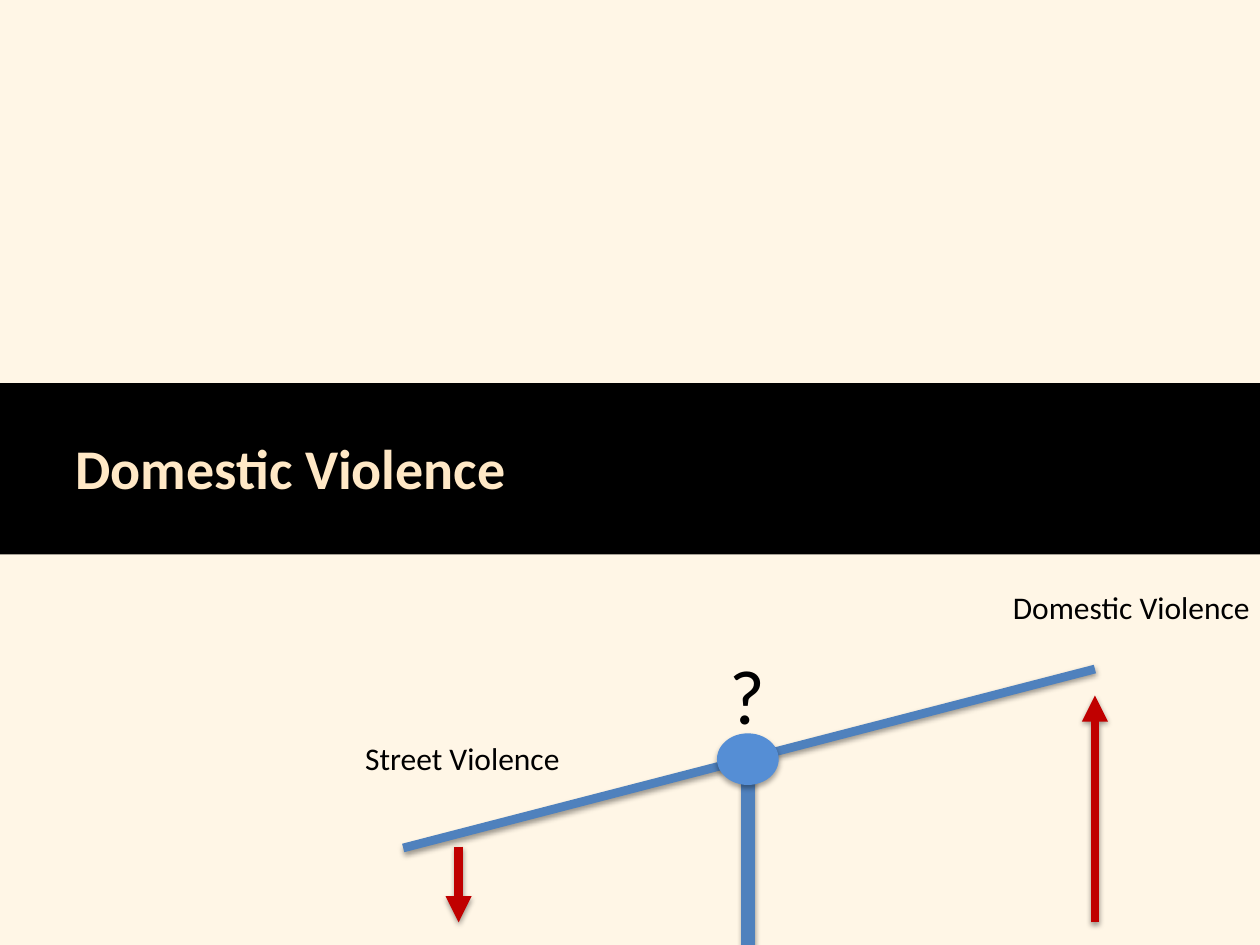
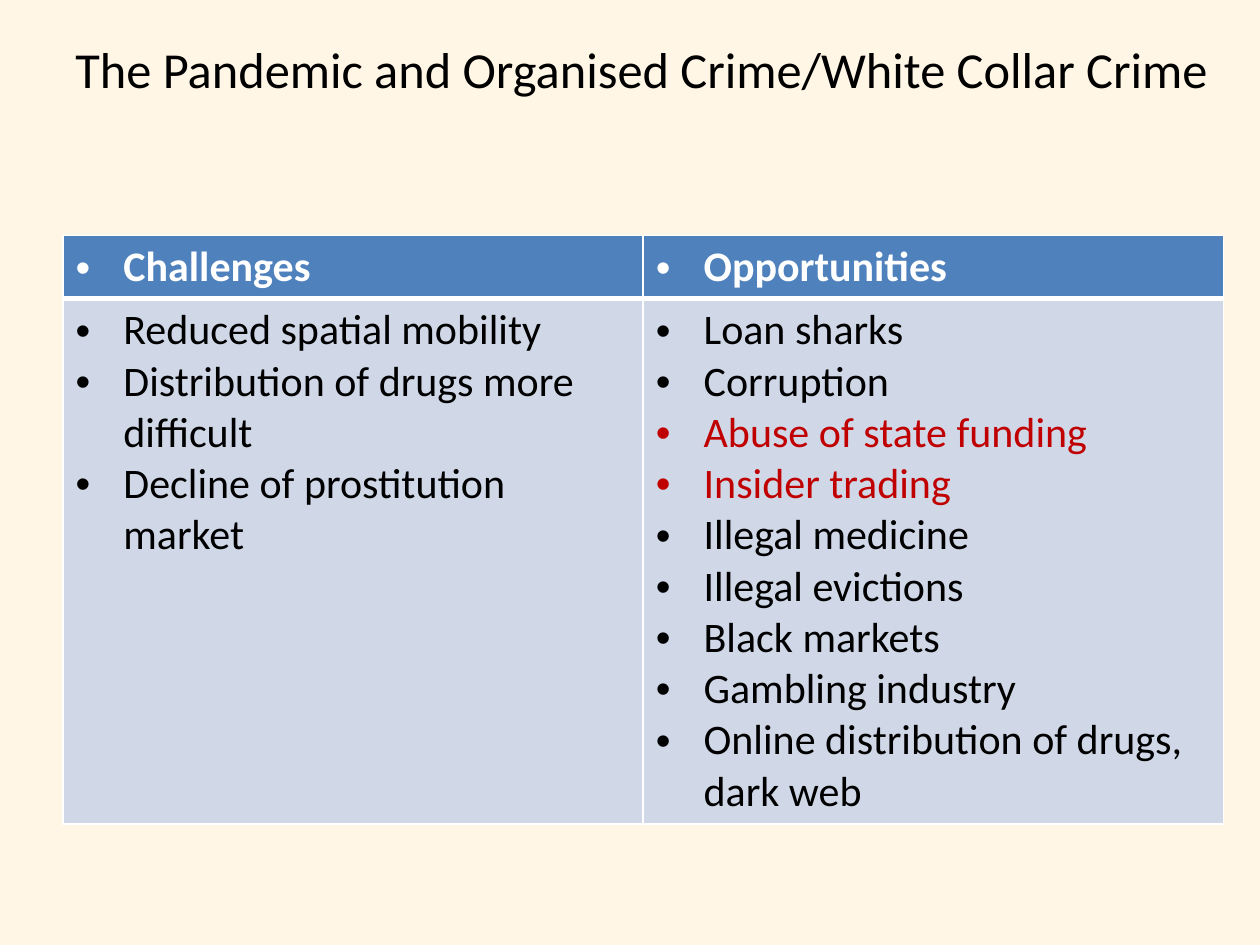
from lxml import etree
from pptx import Presentation
from pptx.dml.color import RGBColor
from pptx.enum.shapes import MSO_CONNECTOR, MSO_SHAPE
from pptx.enum.text import MSO_ANCHOR, MSO_AUTO_SIZE
from pptx.oxml import parse_xml
from pptx.oxml.ns import nsdecls, qn
from pptx.util import Inches, Pt

RECT, OVAL = MSO_SHAPE.RECTANGLE, MSO_SHAPE.OVAL
STRAIGHT = MSO_CONNECTOR.STRAIGHT
MIDDLE = MSO_ANCHOR.MIDDLE
GROW = MSO_AUTO_SIZE.SHAPE_TO_FIT_TEXT

COLS, ROWS = 100, 75
WIDTH, HEIGHT = Inches(10), Inches(7.5)
FONT = "Calibri"
PAPER, INK, CREAM, WHITE = "FFF6E6", "000000", "FFE8C6", "FFFFFF"
BLUE, PALE, HUB, RED = "4F81BD", "D0D8E8", "558ED5", "C00000"


def rgb(code):
    return RGBColor.from_string(code)


def shade(shape, alpha, dist):
    """Give the shape a soft shadow that falls straight down."""
    props = shape._element.spPr
    for old in props.findall(qn("a:effectLst")):
        props.remove(old)
    props.append(parse_xml(
        f'<a:effectLst {nsdecls("a")}>'
        f'<a:outerShdw blurRad="{Pt(3.1)}" dist="{Pt(dist)}" dir="5400000" rotWithShape="0">'
        f'<a:srgbClr val="{INK}"><a:alpha val="{alpha * 1000}"/></a:srgbClr>'
        '</a:outerShdw></a:effectLst>'))


def edge(cell, **sides):
    """Draw white cell borders; sides maps L, R, T, B to points."""
    props = cell._tc.get_or_add_tcPr()
    for spot, side in enumerate("LRTB"):
        props.insert(spot, parse_xml(
            f'<a:ln{side} {nsdecls("a")} w="{Pt(sides.get(side, 1))}"><a:solidFill>'
            f'<a:srgbClr val="{WHITE}"/></a:solidFill></a:ln{side}>'))


def bullet(para, color):
    props = para._p.get_or_add_pPr()
    dent = Inches(0.38)
    props.set("marL", str(dent))
    props.set("indent", str(-dent))
    tint = etree.SubElement(props, qn("a:buClr"))
    etree.SubElement(tint, qn("a:srgbClr"), val=color)
    etree.SubElement(props, qn("a:buFont"), typeface="Arial")
    etree.SubElement(props, qn("a:buChar"), char="•")


class Deck:
    """Holds the style and the current slide; lengths are grid columns and rows."""

    def __init__(self):
        self.prs = Presentation()
        self.prs.slide_width, self.prs.slide_height = WIDTH, HEIGHT
        self.slide = None

    def x(self, cols):
        return round(WIDTH * cols / COLS)

    def y(self, rows):
        return round(HEIGHT * rows / ROWS)

    def box(self, left, top, width, height):
        return self.x(left), self.y(top), self.x(width), self.y(height)

    def page(self):
        self.slide = self.prs.slides.add_slide(self.prs.slide_layouts[6])
        back = self.slide.background.fill
        back.solid()
        back.fore_color.rgb = rgb(PAPER)

    def style(self, para, size, color, bold=False):
        font = para.font
        font.name, font.size, font.bold = FONT, Pt(size), bold
        font.color.rgb = rgb(color)

    def shape(self, kind, place, fill):
        item = self.slide.shapes.add_shape(kind, *self.box(*place))
        item.shadow.inherit = False
        item.fill.solid()
        item.fill.fore_color.rgb = rgb(fill)
        item.line.fill.background()
        return item

    def text(self, words, place, size, color=INK, bold=False, wrap=False):
        frame = self.slide.shapes.add_textbox(*self.box(*place)).text_frame
        frame.word_wrap = wrap
        if wrap:
            frame.vertical_anchor = MIDDLE
        else:
            frame.auto_size = GROW
        para = frame.paragraphs[0]
        para.text = words
        self.style(para, size, color, bold)

    def line(self, start, end, color, width, arrow=False):
        ends = self.x(start[0]), self.y(start[1]), self.x(end[0]), self.y(end[1])
        item = self.slide.shapes.add_connector(STRAIGHT, *ends)
        item.line.color.rgb = rgb(color)
        item.line.width = Pt(width)
        if arrow:
            etree.SubElement(item.line._get_or_add_ln(), qn("a:tailEnd"), type="triangle")
        shade(item, 38, 1.6)

    def cell(self, cell, items, fill, color, bold=False, marked=()):
        cell.fill.solid()
        cell.fill.fore_color.rgb = rgb(fill)
        cell.text = "\n".join(items)
        for para in cell.text_frame.paragraphs:
            tint = RED if para.text in marked else color
            bullet(para, tint)
            self.style(para, 24, tint, bold)

    def table(self, place, head, lists, marked):
        """Draw one column per heading, with its list of points below."""
        grid = self.slide.shapes.add_table(2, len(head), *self.box(*place)).table
        grid.rows[0].height = self.y(5)
        grid.rows[1].height = self.y(place[3] - 5)
        for col, (title, items) in enumerate(zip(head, lists)):
            top, body = grid.cell(0, col), grid.cell(1, col)
            self.cell(top, [title], BLUE, WHITE, bold=True)
            self.cell(body, items, PALE, INK, marked=marked)
            edge(top, B=3)
            edge(body, T=3)


def scale(deck):
    """Slide 1: a tilted scale below the section band."""
    deck.page()
    deck.shape(RECT, (0, 30.4, COLS, 13.6), INK)
    deck.text("Domestic Violence", (5, 33.9, 36.5, 6.4), 32, CREAM, bold=True)
    deck.line((59.4, ROWS), (59.4, 60.2), BLUE, 8)
    deck.line((32, 67.3), (86.9, 53.1), BLUE, 5)
    deck.text("Street Violence", (28, 58.2, 17.6, 4), 18)
    deck.text("Domestic Violence", (79.4, 46.2, 21.1, 4), 18)
    for col, start, end in ((86.9, 73.2, 55.2), (36.4, 67.2, 73.2)):
        deck.line((col, start), (col, end), RED, 5, arrow=True)
    deck.text("?", (56.9, 50.9, 4.9, 8.4), 44)
    shade(deck.shape(OVAL, (56.9, 58.2, 4.9, 4.1), HUB), 35, 1.8)


def crime(deck):
    """Slide 2: challenges against opportunities."""
    deck.page()
    deck.text("The Pandemic and Organised Crime/White Collar Crime",
              (5, 0.5, 94, 9.9), 28.8, wrap=True)
    hard = ["Reduced spatial mobility", "Distribution of drugs more difficult",
            "Decline of prostitution market"]
    gains = ["Loan sharks", "Corruption", "Abuse of state funding", "Insider trading",
             "Illegal medicine", "Illegal evictions", "Black markets",
             "Gambling industry", "Online distribution of drugs, dark web"]
    deck.table((5, 18.7, 92.1, 46.7), ["Challenges", "Opportunities"],
               [hard, gains], marked=gains[2:4])


def main():
    deck = Deck()
    scale(deck)
    crime(deck)
    deck.prs.save("out.pptx")


if __name__ == "__main__":
    main()
